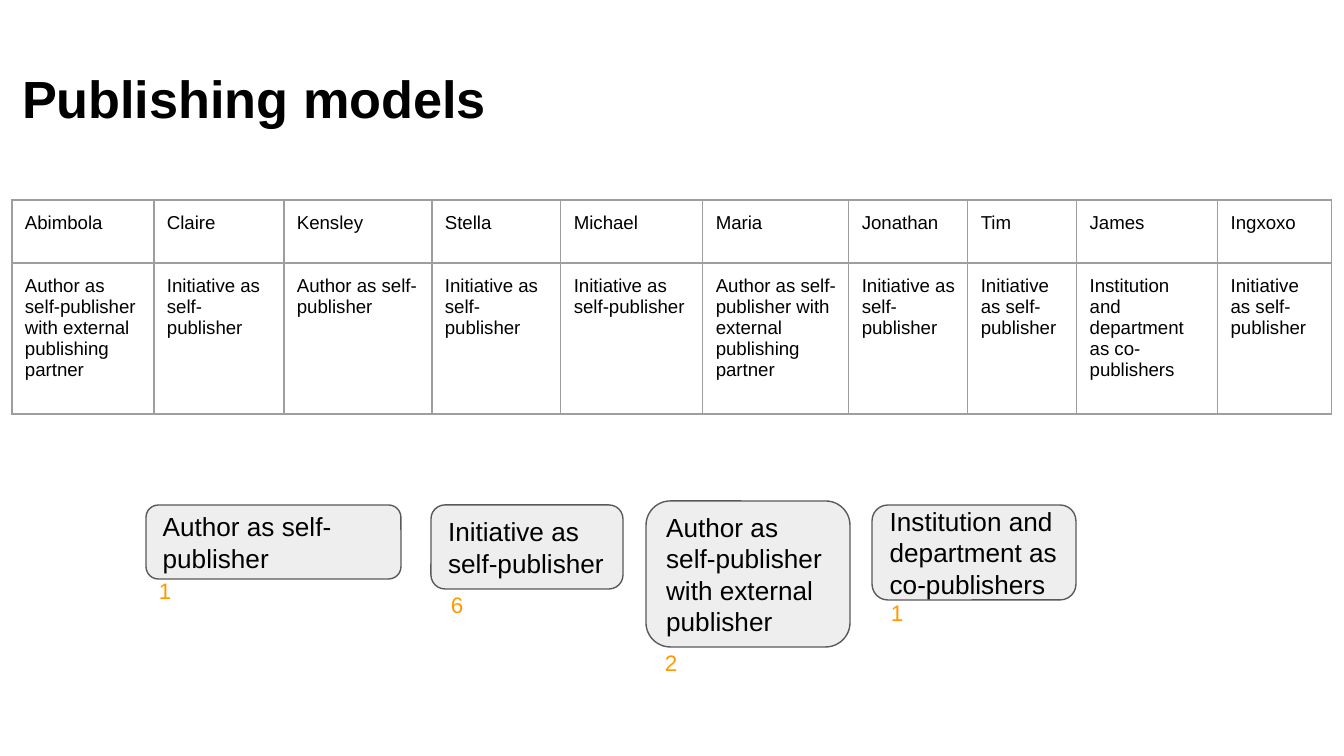
from lxml.etree import SubElement as Sub
from pptx import Presentation
from pptx.dml.color import RGBColor as Rgb
from pptx.enum.shapes import MSO_SHAPE as Kind
from pptx.enum.text import MSO_ANCHOR as Anchor, PP_ALIGN as Align
from pptx.oxml.ns import qn
from pptx.util import Pt


def px(n):
    return round(n * 914400 / 134.4)


def tint(code):
    return Rgb.from_string(code)


class Deck:
    font = "Arial"
    ink = "000000"
    fill = "EEEEEE"
    edge = "595959"
    rule = "9E9E9E"
    mark = "FF9900"
    pad = 13

    def __init__(self, wide, high):
        self.show = Presentation()
        self.show.slide_width = px(wide)
        self.show.slide_height = px(high)
        self.slide = self.show.slides.add_slide(self.show.slide_layouts[6])

    def label(self, frame, words, size, hue, bold=False):
        frame.word_wrap = True
        line = frame.paragraphs[0]
        line.text = words
        line.alignment = Align.LEFT
        font = line.font
        font.name, font.size, font.bold = self.font, Pt(size), bold
        font.color.rgb = tint(hue)
        return line

    def inset(self, frame, side, top):
        frame.margin_left = frame.margin_right = px(side)
        frame.margin_top = frame.margin_bottom = px(top)

    def text(self, area, words, size, hue):
        box = self.slide.shapes.add_textbox(*map(px, area))
        self.inset(box.text_frame, self.pad, self.pad)
        self.label(box.text_frame, words, size, hue)

    def title(self, area, words):
        frame = self.slide.shapes.add_textbox(*map(px, area)).text_frame
        self.inset(frame, 10, 5)
        frame.vertical_anchor = Anchor.MIDDLE
        self.label(frame, words, 28, self.ink, True).line_spacing = 0.9

    def box(self, area, words):
        shape = self.slide.shapes.add_shape(
            Kind.FLOWCHART_ALTERNATE_PROCESS, *map(px, area))
        shape.shadow.inherit = False
        shape.fill.solid()
        shape.fill.fore_color.rgb = tint(self.fill)
        shape.line.color.rgb = tint(self.edge)
        shape.line.width = Pt(0.75)
        frame = shape.text_frame
        self.inset(frame, self.pad, self.pad)
        frame.vertical_anchor = Anchor.MIDDLE
        self.label(frame, words, 14, self.ink)

    def border(self, cell):
        props = cell._tc.get_or_add_tcPr()
        for side in "LRTB":
            line = Sub(props, qn("a:ln" + side), w=str(Pt(0.75)))
            solid = Sub(line, qn("a:solidFill"))
            Sub(solid, qn("a:srgbClr"), val=self.rule)

    def table(self, left, top, wides, highs, rows):
        grid = self.slide.shapes.add_table(
            len(highs), len(wides), px(left), px(top),
            px(sum(wides)), px(sum(highs))).table
        grid.first_row = grid.horz_banding = False
        for col, wide in zip(grid.columns, wides):
            col.width = px(wide)
        for row, high, texts in zip(grid.rows, highs, rows):
            row.height = px(high)
            for cell, words in zip(row.cells, texts):
                self.inset(cell, self.pad, self.pad)
                self.border(cell)
                cell.fill.background()
                self.label(cell.text_frame, words, 10, self.ink)


def main():
    deck = Deck(1344, 756)
    deck.title((12, 28, 1158, 147), "Publishing models")

    own = "Author as self-publisher"
    team = "Initiative as self-publisher"
    joint = "Institution and department as co-publishers"
    aid = own + " with external publishing partner"
    models = {
        "Abimbola": aid, "Claire": team, "Kensley": own, "Stella": team,
        "Michael": team, "Maria": aid, "Jonathan": team, "Tim": team,
        "James": joint, "Ingxoxo": team,
    }
    wides = [142, 130, 148, 129, 142, 146, 119, 109, 141, 114]
    deck.table(12, 200, wides, [63, 151], [models.keys(), models.values()])

    counts = [
        ((146, 505, 255, 74), own, "1", (146, 564)),
        ((431, 505, 192, 84), team, "6", (438, 578)),
        ((646, 501, 204, 146), own + " with external publisher", "2",
         (652, 636)),
        ((872, 505, 204, 95), joint, "1", (878, 586)),
    ]
    for area, words, count, spot in counts:
        deck.box(area, words)
        deck.text((*spot, 44, 46), count, 12, deck.mark)

    deck.show.save("out.pptx")


if __name__ == "__main__":
    main()
